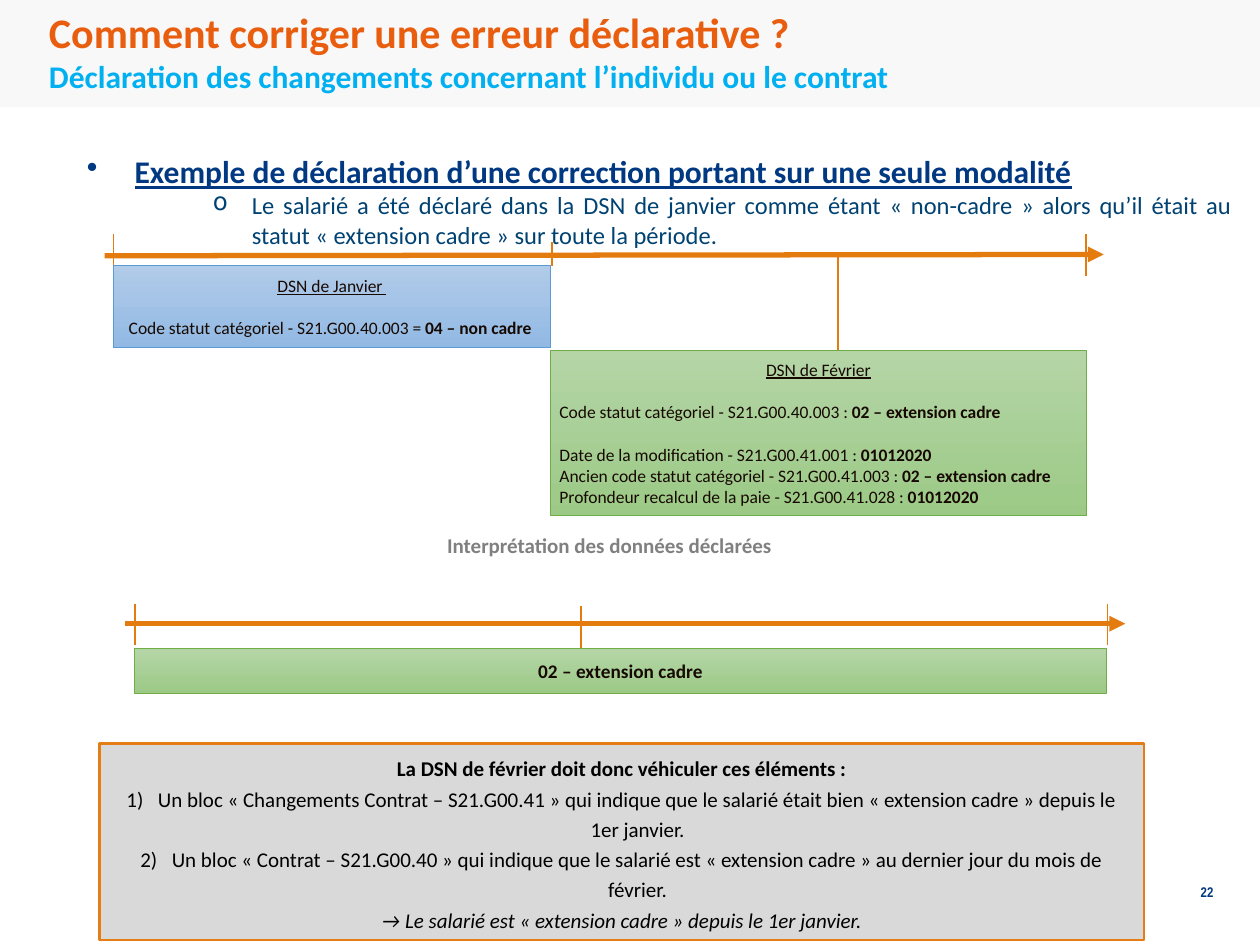
"""Build the slide on correcting a declaration error in the DSN."""
from lxml.etree import SubElement
from pptx import Presentation
from pptx.dml.color import RGBColor
from pptx.enum.shapes import MSO_CONNECTOR, MSO_SHAPE
from pptx.enum.text import MSO_ANCHOR, PP_ALIGN
from pptx.oxml.ns import qn
from pptx.util import Inches, Pt

NAVY = RGBColor(0x00, 0x38, 0x82)
TEAL = RGBColor(0x00, 0x42, 0x72)
SKY = RGBColor(0x00, 0xB0, 0xF0)
RUST = RGBColor(0xE9, 0x5D, 0x0F)
AMBER = RGBColor(0xE4, 0x7B, 0x0E)
FRAME = RGBColor(0xE4, 0x7E, 0x14)
GREY = RGBColor(0x80, 0x80, 0x80)
SILVER = RGBColor(0xD9, 0xD9, 0xD9)
PALE = RGBColor(0xF8, 0xF8, 0xF8)
INK = RGBColor(0x17, 0x09, 0x02)
BLACK = RGBColor(0, 0, 0)
GREEN = [RGBColor(0xB5, 0xD5, 0xA7), RGBColor(0x9C, 0xCA, 0x86)]
LEAF = RGBColor(0x70, 0xAD, 0x47)
BLUE = [RGBColor(0xB1, 0xCB, 0xE9), RGBColor(0x92, 0xB9, 0xE4)]
STEEL = RGBColor(0x5B, 0x9B, 0xD5)
LEFT, MID, RIGHT, JUST = PP_ALIGN.LEFT, PP_ALIGN.CENTER, PP_ALIGN.RIGHT, PP_ALIGN.JUSTIFY

TITLE = "Comment corriger une erreur déclarative ?"
TOPIC = "Déclaration des changements concernant l’individu ou le contrat"
HEAD = "Exemple de déclaration d’une correction portant sur une seule modalité"
CASE = ("Le salarié a été déclaré dans la DSN de janvier comme étant « non-cadre » "
        "alors qu’il était au statut « extension cadre » sur toute la période.")
READ = "Interprétation des données déclarées"
STATUS = "02 – extension cadre"
GAP = 12.2
CARDS = [
    {"at": (0.9, 2.11, 3.47, 0.65), "fill": BLUE, "edge": STEEL, "align": MID,
     "head": "DSN de Janvier ",
     "rows": [("Code statut catégoriel - S21.G00.40.003 = ", "04 – non cadre ", GAP)]},
    {"at": (4.37, 2.78, 4.25, 1.31), "fill": GREEN, "edge": LEAF, "align": LEFT,
     "head": "DSN de Février",
     "rows": [("Code statut catégoriel - S21.G00.40.003 : ", STATUS, GAP),
              ("Date de la modification - S21.G00.41.001 : ", "01012020", GAP),
              ("Ancien code statut catégoriel - S21.G00.41.003 : ", STATUS, 0),
              ("Profondeur recalcul de la paie - S21.G00.41.028 : ", "01012020", 0)]},
]
AXES = [((0.83, 2.03), (8.76, 2.02)), ((0.99, 4.95), (8.93, 4.95))]
TICKS = [(0.9, 1.86, 0.33), (8.62, 1.86, 0.33), (4.38, 1.92, 0.19), (6.65, 2.02, 0.76),
         (1.07, 4.79, 0.33), (8.79, 4.79, 0.33), (4.61, 4.81, 0.33)]
NEED = "La DSN de février doit donc véhiculer ces éléments :"
STEPS = [
    "Un bloc « Changements Contrat – S21.G00.41 » qui indique que le salarié était bien "
    "« extension cadre » depuis le 1er janvier.",
    "Un bloc « Contrat – S21.G00.40 » qui indique que le salarié est « extension cadre » "
    "au dernier jour du mois de février.",
]
RESULT = "→ Le salarié est « extension cadre » depuis le 1er janvier."


def write(frame, text, size=10, color=INK, bold=False, italic=False, under=False,
          align=LEFT, tail="", before=0, lead=None, indent=None, bullet=None,
          face="Calibri"):
    para = frame.paragraphs[0]
    if para.runs:
        para = frame.add_paragraph()
    para.alignment = align
    if before:
        para.space_before = Pt(before)
    if lead:
        para.line_spacing = lead
    if bullet:
        props = para._p.get_or_add_pPr()
        props.set("marL", str(Inches(indent[0])))
        props.set("indent", str(Inches(indent[1])))
        tag, key, value = bullet
        SubElement(props, qn(tag)).set(key, value)
    for part, heavy in ((text, bold), (tail, True)):
        if part:
            run = para.add_run()
            run.text = part
            font = run.font
            font.name, font.size, font.bold = face, Pt(size), heavy
            font.italic, font.underline = italic, under
            font.color.rgb = color


def label(at, wrap=True):
    frame = slide.shapes.add_textbox(*map(Inches, at)).text_frame
    frame.word_wrap = wrap
    return frame


def block(at, fill, edge=None, width=0.5, inset=(0.07, 0.04)):
    shape = slide.shapes.add_shape(MSO_SHAPE.RECTANGLE, *map(Inches, at))
    shape.shadow.inherit = False
    if isinstance(fill, list):
        shape.fill.gradient()
        shape.fill.gradient_angle = 270
        for stop, color in zip(shape.fill.gradient_stops, fill):
            stop.color.rgb = color
    else:
        shape.fill.solid()
        shape.fill.fore_color.rgb = fill
    if edge:
        shape.line.color.rgb = edge
        shape.line.width = Pt(width)
    else:
        shape.line.fill.background()
    frame = shape.text_frame
    frame.word_wrap = True
    frame.vertical_anchor = MSO_ANCHOR.MIDDLE
    frame.margin_left = frame.margin_right = Inches(inset[0])
    frame.margin_top = frame.margin_bottom = Inches(inset[1])
    return frame


def rule(start, end, width=1, arrow=False):
    line = slide.shapes.add_connector(MSO_CONNECTOR.STRAIGHT, *map(Inches, start + end))
    line.line.color.rgb = AMBER
    line.line.width = Pt(width)
    if arrow:
        SubElement(line.line._get_or_add_ln(), qn("a:tailEnd")).set("type", "triangle")
    SubElement(line._element.spPr, qn("a:effectLst"))


deck = Presentation()
deck.slide_width, deck.slide_height = Inches(10), Inches(7.5)
slide = deck.slides.add_slide(deck.slide_layouts[6])

block((0, 0, 10, 0.85), PALE)
write(label((7.4, 6.96, 2.33, 0.4)), "22", size=8, color=NAVY, bold=True,
      align=RIGHT, face="Arial Narrow")
body = label((0.59, 1.16, 9.29, 1.14))
write(body, HEAD, size=18, color=NAVY, bold=True, under=True, align=JUST,
      indent=(0.38, -0.38), bullet=("a:buChar", "char", "•"))
write(body, CASE, size=14, color=TEAL, align=JUST,
      indent=(1.31, -0.31), bullet=("a:buChar", "char", "o"))
top = label((0.29, 0, 9.51, 0.71))
write(top, TITLE, size=24, color=RUST, bold=True)
write(top, TOPIC, size=18, color=SKY, bold=True)
write(label((3.45, 4.18, 2.84, 0.3), wrap=False), READ, size=12, color=GREY, bold=True)

for start, end in AXES:
    rule(start, end, width=3, arrow=True)
for x, y, drop in TICKS:
    rule((x, y), (x, y + drop))
for card in CARDS:
    frame = block(card["at"], card["fill"], card["edge"])
    write(frame, card["head"], under=True, align=MID)
    for text, value, gap in card["rows"]:
        write(frame, text, tail=value, before=gap, align=card["align"])
write(block((1.07, 5.15, 7.71, 0.35), GREEN, LEAF), STATUS, size=11, bold=True, align=MID)

note = block((0.79, 5.9, 8.29, 1.56), SILVER, FRAME, width=1.5, inset=(0.1, 0.05))
style = {"size": 12, "color": BLACK, "align": MID, "lead": 1.2}
write(note, NEED, bold=True, **style)
for step in STEPS:
    write(note, step, indent=(0.25, -0.25),
          bullet=("a:buAutoNum", "type", "arabicParenR"), **style)
write(note, RESULT, italic=True, **style)

deck.save("out.pptx")
